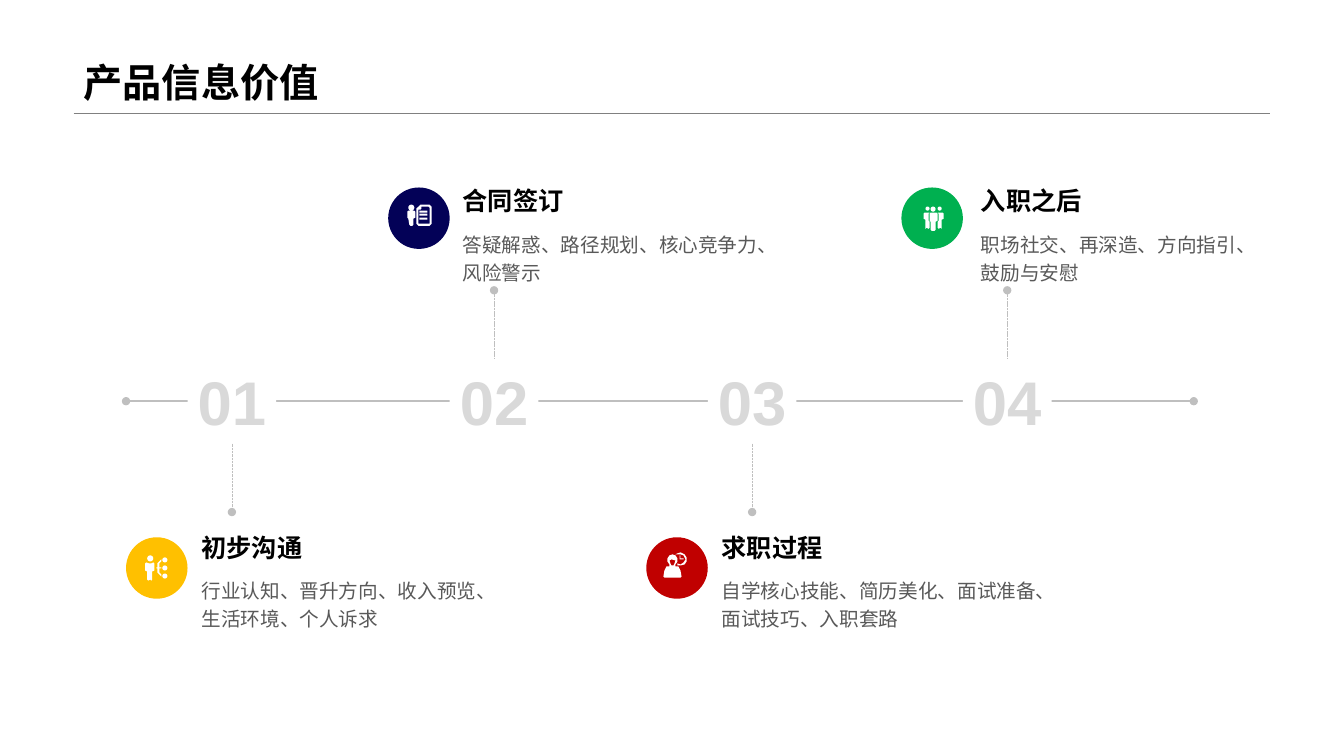
import dataclasses
import math

import pptx
import pptx.dml.color
import pptx.enum.dml
import pptx.enum.lang
import pptx.enum.shapes
import pptx.enum.text
import pptx.oxml
import pptx.oxml.ns
import pptx.util

EMU_PER_PX = 9144
ALIGN = pptx.enum.text.PP_ALIGN
ANCHOR = pptx.enum.text.MSO_ANCHOR
SHAPE = pptx.enum.shapes.MSO_SHAPE


@dataclasses.dataclass(frozen=True)
class Theme:
    latin: str = "Arial"
    chinese: str = "Noto Sans CJK SC"
    black: str = "000000"
    body: str = "595959"
    number: str = "D9D9D9"
    line: str = "BFBFBF"
    rule: str = "808080"
    white: str = "FFFFFF"
    title_size: int = 28
    number_size: int = 44
    heading_size: int = 18
    body_size: int = 14


THEME = Theme()
NUMBER_TOP, NUMBER_WIDTH, NUMBER_HEIGHT = 356, 88, 84
STEM_LENGTH = 68
BADGE_SIZE = 61
CAPTION_WIDTH = 359


def px(length):
    return pptx.util.Emu(round(length * EMU_PER_PX))


def rgb(value):
    return pptx.dml.color.RGBColor.from_string(value)


def set_values(target, values):
    for name, value in values.items():
        setattr(target, name, value)


def write(box, lines, size, color, font=THEME.latin, bold=False, frame=None, para_format=None):
    text_frame = box.text_frame
    set_values(text_frame, {"word_wrap": True, "auto_size": pptx.enum.text.MSO_AUTO_SIZE.NONE} | (frame or {}))
    for index, line in enumerate(lines):
        para = text_frame.add_paragraph() if index else text_frame.paragraphs[0]
        set_values(para, {"alignment": ALIGN.LEFT} | (para_format or {}))
        span = para.add_run()
        span.text = line
        set_values(span.font, {
            "name": font, "size": pptx.util.Pt(size), "bold": bold,
            "language_id": pptx.enum.lang.MSO_LANGUAGE_ID.SIMPLIFIED_CHINESE,
        })
        span.font.color.rgb = rgb(color)
        east_asian = pptx.oxml.parse_xml(f'<a:ea {pptx.oxml.ns.nsdecls("a")} typeface="{font}"/>')
        span.font._element.find(pptx.oxml.ns.qn("a:latin")).addnext(east_asian)


def add_text(page, left, top, width, height, lines, size, color, **formats):
    box = page.shapes.add_textbox(px(left), px(top), px(width), px(height))
    write(box, lines, size, color, **formats)


def paint(shape, color):
    shape.shadow.inherit = False
    shape.fill.solid()
    shape.fill.fore_color.rgb = rgb(color)
    shape.line.fill.background()


def add_plain(page, kind, left, top, width, height, color):
    shape = page.shapes.add_shape(kind, px(left), px(top), px(width), px(height))
    paint(shape, color)
    return shape


def add_line(page, start, end, color, weight, dash=None, ovals=()):
    """ovals names the ends that carry a dot: headEnd, tailEnd."""
    line = page.shapes.add_connector(
        pptx.enum.shapes.MSO_CONNECTOR.STRAIGHT, px(start[0]), px(start[1]), px(end[0]), px(end[1]))
    line.line.color.rgb = rgb(color)
    set_values(line.line, {"width": pptx.util.Pt(weight), "dash_style": dash})
    namespace = pptx.oxml.ns.nsdecls("a")
    outline = line.line._get_or_add_ln()
    for oval in ovals:
        outline.append(pptx.oxml.parse_xml(f'<a:{oval} {namespace} type="oval"/>'))
    outline.addnext(pptx.oxml.parse_xml(f"<a:effectLst {namespace}/>"))
    return line


def dot(left, top, size):
    radius = size / 2
    angles = [math.tau * step / 16 for step in range(16)]
    return [(left + radius * (1 + math.cos(angle)), top + radius * (1 + math.sin(angle))) for angle in angles]


def bar(left, top, width, height):
    return [(left, top), (left + width, top), (left + width, top + height), (left, top + height)]


def mirror(outline, axis):
    return [(2 * axis - x, y) for x, y in outline]


def add_icon(page, left, top, outlines):
    """Draw all outlines as one white shape; an outline inside another is a hole."""
    builder = None
    for outline in outlines:
        first, *rest = [(px(left + x), px(top + y)) for x, y in outline]
        if builder is None:
            builder = page.shapes.build_freeform(*first)
        else:
            builder.move_to(*first)
        builder.add_line_segments(rest, close=True)
    paint(builder.convert_to_shape(), THEME.white)


NETWORK_ICON = [
    dot(21, 18, 6),
    [(19, 26), (20, 25), (23, 26), (25, 26), (27, 25), (28, 26), (28, 33), (26, 34), (26, 42), (25, 43),
     (24, 42), (22, 43), (21, 42), (21, 34), (19, 33)],
    [(35, 22), (35, 24), (33, 26), (33, 30), (35, 30), (35, 31), (33, 31), (33, 35), (35, 37), (35, 39),
     (31, 35), (31, 31), (30, 31), (30, 30), (31, 30), (31, 26)],
    *[dot(36, top, 5) for top in (20, 28, 36)],
]
CONTRACT_ICON = [
    dot(20, 17, 6),
    [(19, 24), (20, 23), (26, 23), (27, 24), (27, 30), (25, 31), (25, 37), (24, 38), (22, 38), (21, 37),
     (20, 31), (19, 30)],
    [(32, 17), (41, 17), (43, 19), (43, 36), (41, 38), (30, 38), (28, 36), (28, 21)],
    [(33, 19), (40, 19), (41, 20), (41, 36), (30, 36), (30, 22), (32, 22), (33, 21)],
    *[bar(31, top, 8, 2) for top in (23, 26, 30)],
]
INTERVIEW_ICON = [
    [(17, 39), (18, 33), (20, 29), (23, 29), (23, 27), (21, 24), (21, 21), (23, 18), (26, 17), (29, 18),
     (31, 21), (31, 24), (29, 27), (29, 29), (32, 29), (34, 33), (35, 39), (34, 40), (18, 40)],
    [(23, 23), (25, 22), (29, 23), (28, 26), (27, 28), (25, 28), (24, 26)],
    [(29, 17), (31, 16), (34, 15), (38, 17), (40, 20), (40, 24), (38, 27), (34, 28), (31, 28), (31, 26),
     (34, 27), (37, 25), (39, 22), (37, 18), (34, 17), (30, 17)],
    [(33, 18), (34, 18), (34, 21), (37, 21), (37, 22), (33, 22)],
]
SIDE_COLLEAGUE = [
    dot(24, 19, 4),
    [(22, 26), (23, 25), (28, 25), (27, 26), (27, 33), (28, 34), (28, 40), (27, 41), (25, 40), (24, 41),
     (24, 32), (22, 31)],
]
TEAM_ICON = [
    *SIDE_COLLEAGUE,
    *[mirror(outline, 32) for outline in SIDE_COLLEAGUE],
    dot(29, 19, 5),
    [(28, 26), (29, 25), (35, 25), (36, 26), (36, 33), (34, 34), (34, 42), (33, 43), (30, 43), (29, 42),
     (29, 34), (28, 33)],
]


@dataclasses.dataclass(frozen=True)
class Stage:
    number: str
    left: int
    caption_left: int
    above: bool
    color: str
    icon: list
    heading: str
    lines: tuple


STAGES = [
    Stage("01", 186, 190, False, "FFC000", NETWORK_ICON, "初步沟通",
          ("行业认知、晋升方向、收入预览、", "生活环境、个人诉求")),
    Stage("02", 446, 449, True, "030157", CONTRACT_ICON, "合同签订",
          ("答疑解惑、路径规划、核心竞争力、", "风险警示")),
    Stage("03", 702, 706, False, "C00000", INTERVIEW_ICON, "求职过程",
          ("自学核心技能、简历美化、面试准备、", "面试技巧、入职套路")),
    Stage("04", 955, 963, True, "00B050", TEAM_ICON, "入职之后",
          ("职场社交、再深造、方向指引、", "鼓励与安慰")),
]


def add_title(page, text):
    title = page.shapes.title
    set_values(title, {"left": px(73), "top": px(-2), "width": px(1187), "height": px(112)})
    write(title, [text], THEME.title_size, THEME.black, bold=True,
          frame={"vertical_anchor": ANCHOR.BOTTOM}, para_format={"line_spacing": 0.9})
    add_line(page, (73, 112), (1260, 112), THEME.rule, 0.25)


def add_stage(page, stage):
    number = add_plain(page, SHAPE.RECTANGLE, stage.left, NUMBER_TOP, NUMBER_WIDTH, NUMBER_HEIGHT, THEME.white)
    write(number, [stage.number], THEME.number_size, THEME.number, bold=True,
          frame={"word_wrap": False, "vertical_anchor": ANCHOR.MIDDLE}, para_format={"alignment": ALIGN.CENTER})

    center = stage.left + NUMBER_WIDTH // 2
    bottom = NUMBER_TOP + NUMBER_HEIGHT
    start, end = (NUMBER_TOP, NUMBER_TOP - STEM_LENGTH) if stage.above else (bottom, bottom + STEM_LENGTH)
    stem = add_line(page, (center, start), (center, end), THEME.line, 0.25,
                    pptx.enum.dml.MSO_LINE.SQUARE_DOT, ["tailEnd"])
    stem.begin_connect(number, 0 if stage.above else 2)

    badge_left = stage.left - BADGE_SIZE
    badge_top, heading_top = (186, 179) if stage.above else (533, 523)
    add_plain(page, SHAPE.OVAL, badge_left, badge_top, BADGE_SIZE, BADGE_SIZE, stage.color)
    add_icon(page, badge_left, badge_top, stage.icon)
    add_text(page, stage.caption_left, heading_top, CAPTION_WIDTH, 38, [stage.heading],
             THEME.heading_size, THEME.black, bold=True)
    add_text(page, stage.caption_left, heading_top + 42, CAPTION_WIDTH, 61, stage.lines,
             THEME.body_size, THEME.body, font=THEME.chinese, para_format={"line_spacing": 1.2})


def main():
    deck = pptx.Presentation()
    set_values(deck, {"slide_width": px(1333), "slide_height": px(750)})
    page = deck.slides.add_slide(deck.slide_layouts.get_by_name("Title Only"))
    add_title(page, "产品信息价值")
    add_line(page, (125, 398), (1184, 398), THEME.line, 1, ovals=["headEnd", "tailEnd"])
    for stage in STAGES:
        add_stage(page, stage)
    deck.save("out.pptx")


if __name__ == "__main__":
    main()
